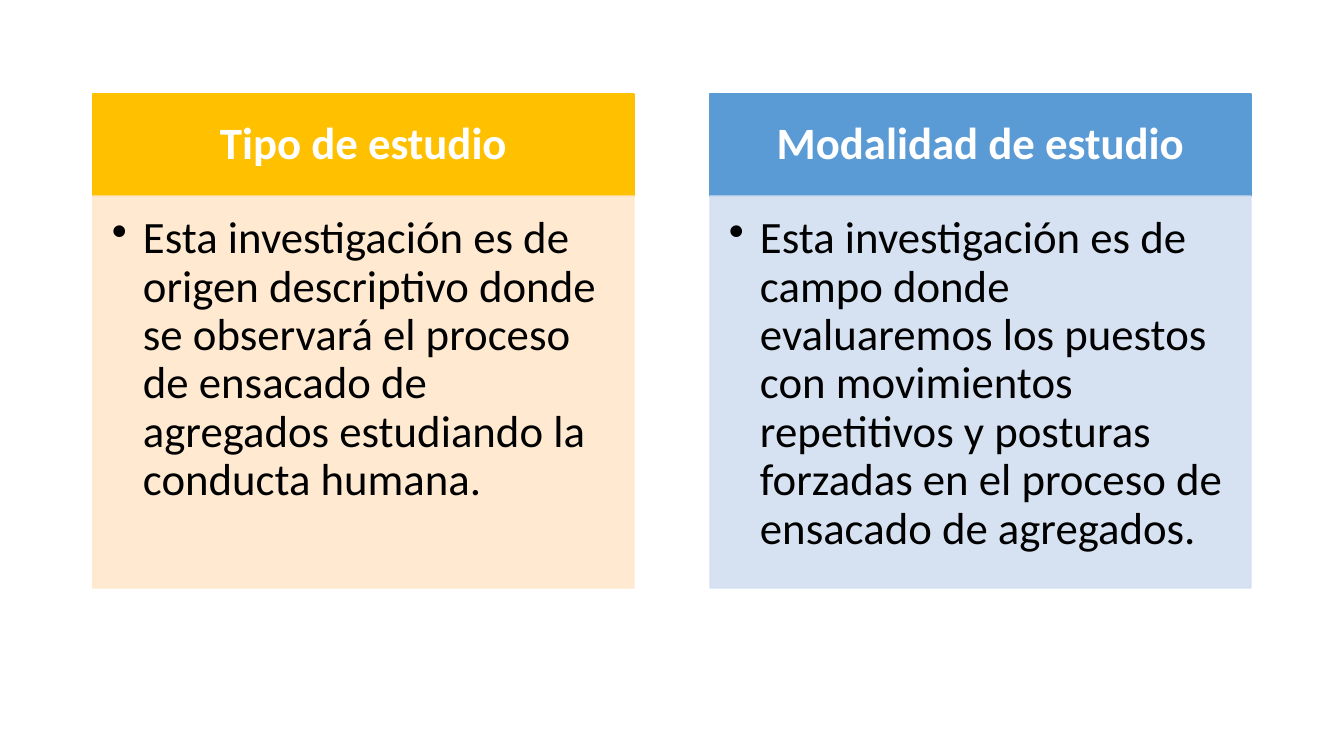
import pptx
import pptx.dml.color
import pptx.enum.shapes
import pptx.enum.text
import pptx.oxml
import pptx.oxml.ns
import pptx.util
from lxml import etree

PX = 914400 / 100.8


def px(n):
    return pptx.util.Emu(round(n * PX))


def rgb(code):
    return pptx.dml.color.RGBColor.from_string(code)


def set_alpha(fill_format, percent):
    for clr in fill_format.fore_color._xFill.iter(pptx.oxml.ns.qn("a:srgbClr")):
        alpha = etree.SubElement(clr, pptx.oxml.ns.qn("a:alpha"))
        alpha.set("val", str(percent * 1000))


def add_bullet(p, indent):
    pPr = p._p.get_or_add_pPr()
    pPr.set("marL", str(px(indent)))
    pPr.set("indent", str(-px(indent)))
    bullet = etree.SubElement(pPr, pptx.oxml.ns.qn("a:buChar"))
    bullet.set("char", "•")


def write(tf, text, color, bold=False, center=False, middle=False,
          insets=(0, 0, 0, 0), indent=0):
    """Fill a text frame; insets are left, top, right, bottom in px."""
    tf.word_wrap = True
    tf.margin_left, tf.margin_top, tf.margin_right, tf.margin_bottom = map(px, insets)
    anchor = pptx.enum.text.MSO_ANCHOR
    tf.vertical_anchor = anchor.MIDDLE if middle else anchor.TOP
    p = tf.paragraphs[0]
    align = pptx.enum.text.PP_ALIGN
    p.alignment = align.CENTER if center else align.LEFT
    p.line_spacing = 0.9
    if indent:
        p.level = 1
        add_bullet(p, indent)
    r = p.add_run()
    r.text = text
    r.font.name = Deck.font
    r.font.size = pptx.util.Pt(Deck.size)
    r.font.bold = bold
    r.font.color.rgb = rgb(color)


class Deck:
    font = "Calibri"
    size = 32

    def __init__(self, width, height):
        self.prs = pptx.Presentation()
        self.prs.slide_width, self.prs.slide_height = px(width), px(height)
        self.s = self.prs.slides.add_slide(self.prs.slide_layouts[6])

    def box(self, x, y, w, h, fill, opacity=100):
        sp = self.s.shapes.add_shape(
            pptx.enum.shapes.MSO_SHAPE.RECTANGLE, px(x), px(y), px(w), px(h))
        sp.shadow.inherit = False
        sp.line.width = pptx.util.Pt(1)
        for paint in (sp.fill, sp.line.fill):
            paint.solid()
            paint.fore_color.rgb = rgb(fill)
            if opacity < 100:
                set_alpha(paint, opacity)
        return sp

    def card(self, x, title, body, strong, pale):
        """Draw a coloured heading with a pale bulleted panel below it."""
        top, width, head_h, body_h = 94, 541, 102, 392
        head = self.box(x, top, width, head_h, strong)
        write(head.text_frame, title, "FFFFFF", bold=True, center=True,
              middle=True, insets=(25, 14, 25, 14))
        panel = self.box(x, top + head_h, width, body_h, pale, opacity=90)
        write(panel.text_frame, body, "000000", insets=(19, 19, 25, 28), indent=31)


CARDS = [
    ("Tipo de estudio",
     "Esta investigación es de origen descriptivo donde se observará el proceso "
     "de ensacado de agregados estudiando la conducta humana.",
     "FFC000", "FFE8CC"),
    ("Modalidad de estudio",
     "Esta investigación es de campo donde evaluaremos los puestos con movimientos "
     "repetitivos y posturas forzadas en el proceso de ensacado de agregados.",
     "5B9BD5", "D2DFF0"),
]


def main():
    deck = Deck(1344, 756)
    left, step = 93, 617
    for i, card in enumerate(CARDS):
        deck.card(left + i * step, *card)
    deck.prs.save("out.pptx")


if __name__ == "__main__":
    main()
